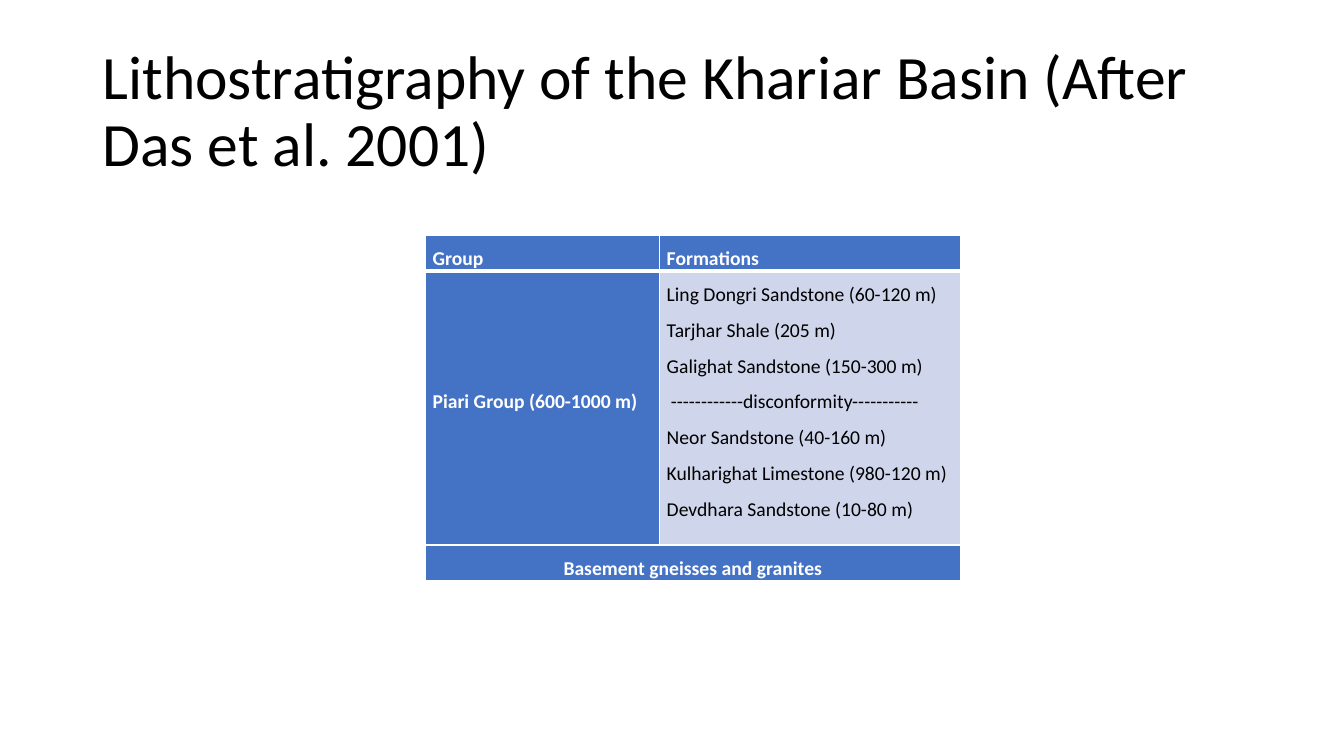
from dataclasses import dataclass

from lxml.etree import SubElement
from pptx import Presentation
from pptx.dml.color import RGBColor
from pptx.enum.text import MSO_ANCHOR, MSO_AUTO_SIZE, PP_ALIGN
from pptx.oxml.ns import qn
from pptx.util import Pt


@dataclass(frozen=True)
class Theme:
    font: str = "Calibri"
    title: int = 44
    body: int = 14
    black: str = "000000"
    white: str = "FFFFFF"
    blue: str = "4472C4"
    pale: str = "CFD5EA"


THEME = Theme()
BEDS = [
    "Ling Dongri Sandstone (60-120 m)",
    "Tarjhar Shale (205 m)",
    "Galighat Sandstone (150-300 m)",
    "------------disconformity-----------",
    "Neor Sandstone (40-160 m)",
    "Kulharighat Limestone (980-120 m)",
    "Devdhara Sandstone (10-80 m)",
]
GAP = BEDS[3]
LINE = 34  # height of one text line


def px(n):
    return n * 9525


def style(para, size, color, bold=False):
    font = para.font
    font.name, font.size, font.bold = THEME.font, Pt(size), bold
    font.color.rgb = RGBColor.from_string(color)


def border(cell, side, width):
    line = SubElement(cell._tc.get_or_add_tcPr(), qn(f"a:ln{side}"), w=str(Pt(width)))
    fill = SubElement(line, qn("a:solidFill"))
    SubElement(fill, qn("a:srgbClr"), val=THEME.white)


def write(cell, lines, color, bold, align):
    frame = cell.text_frame
    frame.text = "\n".join(lines)
    for para in frame.paragraphs:
        para.alignment, para.line_spacing = align, 1.5
        if para.text == GAP:
            para._p.get_or_add_pPr().set("marL", str(px(4)))
        style(para, THEME.body, color, bold)


def add_title(slide, box, text):
    title = slide.shapes.title
    title.left, title.top, title.width, title.height = map(px, box)
    frame = title.text_frame
    frame.text = text
    frame.word_wrap = True
    frame.auto_size = MSO_AUTO_SIZE.NONE
    frame.vertical_anchor = MSO_ANCHOR.MIDDLE
    para = frame.paragraphs[0]
    para.alignment, para.line_spacing = PP_ALIGN.LEFT, 0.9
    style(para, THEME.title, THEME.black)


def add_strata(slide, box):
    left, top, width, height = box
    table = slide.shapes.add_table(3, 2, *map(px, box)).table
    first = 223
    for col, size in zip(table.columns, (first, width - first)):
        col.width = px(size)
    for row, size in zip(table.rows, (LINE, height - 2 * LINE, LINE)):
        row.height = px(size)

    # Fills, insets and borders; the heading has a thick rule below
    for r in range(3):
        for c in range(2):
            cell = table.cell(r, c)
            cell.margin_left = cell.margin_right = px(7)
            cell.margin_top = cell.margin_bottom = 0
            for side in "LRTB":
                thick = (r, side) in ((0, "B"), (1, "T"))
                border(cell, side, 3 if thick else 1)
            cell.fill.solid()
            color = THEME.pale if (r, c) == (1, 1) else THEME.blue
            cell.fill.fore_color.rgb = RGBColor.from_string(color)

    # Wording; the group name is level with the disconformity
    just = PP_ALIGN.JUSTIFY
    write(table.cell(0, 0), ["Group"], THEME.white, True, just)
    write(table.cell(0, 1), ["Formations"], THEME.white, True, just)
    group = table.cell(1, 0)
    group.margin_top = px(BEDS.index(GAP) * LINE)
    write(group, ["Piari Group (600-1000 m)"], THEME.white, True, just)
    write(table.cell(1, 1), BEDS, THEME.black, False, just)
    base = table.cell(2, 0)
    base.merge(table.cell(2, 1))
    write(base, ["Basement gneisses and granites"], THEME.white, True, PP_ALIGN.CENTER)


def main():
    deck = Presentation()
    deck.slide_width, deck.slide_height = px(1280), px(720)
    slide = deck.slides.add_slide(deck.slide_layouts[5])
    add_title(slide, (88, 38, 1104, 139),
              "Lithostratigraphy of the Khariar Basin (After Das et al. 2001)")
    add_strata(slide, (405, 224, 510, 329))
    deck.save("out.pptx")


if __name__ == "__main__":
    main()
